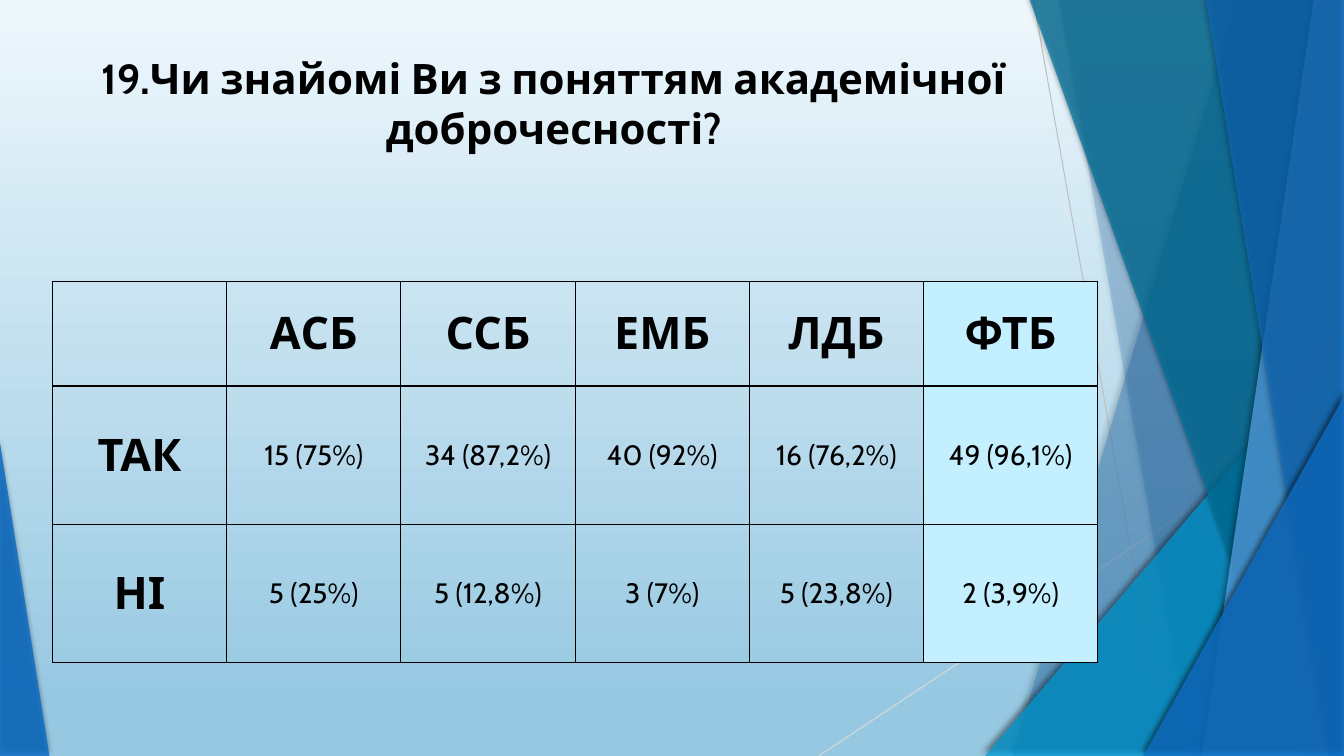
from dataclasses import dataclass

from lxml import etree
from pptx import Presentation
from pptx import util as u
from pptx.dml.color import RGBColor
from pptx.enum import shapes, text
from pptx.oxml.ns import qn


@dataclass(frozen=True)
class Theme:
    font: str = "Cabin"
    ink: str = "000000"
    sky: tuple = (("96C8E2", 0.06), ("EEF7FC", 1))
    blue: str = "0F6FC6"
    cyan: str = "009DD9"
    teal: str = "0076A3"
    pale: str = "59AAF2"
    mark: str = "C4EFFF"
    title: int = 30
    head: int = 32
    body: int = 20
    rule: float = 0.96


T = Theme()
W, H = 13.33, 7.5
TOP = -0.01  # facets bleed over the upper edge

ROWS = [
    ["", "АСБ", "ССБ", "ЕМБ", "ЛДБ", "ФТБ"],
    ["ТАК", "15 (75%)", "34 (87,2%)", "40 (92%)", "16 (76,2%)", "49 (96,1%)"],
    ["НІ", "5 (25%)", "5 (12,8%)", "3 (7%)", "5 (23,8%)", "2 (3,9%)"],
]

# Facets, back to front: upper x and lower x of the left edge, or a triangle's box and apex
FACETS = [
    ((12.28, 10.04), T.blue, 30),
    ((10.5, 11.82), T.blue, 20),
    ((9.77, 3.33, W, 1), T.cyan, 72),
    ((10.21, 12.91), T.teal, 70),
    ((13.03, 11.92), T.pale, 70),
    ((11.96, 13.18), T.blue, 65),
    ((11.34, 3.93, W, 1), T.blue, 80),
    ((0, 4.39, 0.49, 0), T.blue, 85),
]


def rgb(code):
    return RGBColor.from_string(code)


def sub(node, tag, **attrs):
    return etree.SubElement(node, qn(tag), {k: str(v) for k, v in attrs.items()})


def write(frame, words, size=T.body, bold=False, color=T.ink):
    para = frame.paragraphs[0]
    para.alignment = text.PP_ALIGN.CENTER
    run = para.add_run()
    run.text = words
    font = run.font
    font.name, font.size, font.bold = T.font, u.Pt(size), bold
    font.color.rgb = rgb(color)


def sky(slide):
    fill = slide.background.fill
    fill.gradient()
    fill.gradient_angle = 90
    for stop, (color, pos) in zip(fill.gradient_stops, T.sky):
        stop.color.rgb, stop.position = rgb(color), pos


def ray(slide, start, end, color):
    line = slide.shapes.add_connector(
        shapes.MSO_CONNECTOR.STRAIGHT, *map(u.Inches, start + end))
    line.line.color.rgb, line.line.width = rgb(color), u.Pt(0.75)
    sub(line._element.spPr, "a:effectLst")


def facet(slide, form, color, alpha):
    if len(form) == 2:
        high, low = form
        pts = [(u.Inches(x), u.Inches(y))
               for x, y in ((high, TOP), (W, TOP), (W, H), (low, H))]
        pen = slide.shapes.build_freeform(*pts[0])
        pen.add_line_segments(pts[1:], close=True)
        shape = pen.convert_to_shape()
    else:
        left, top, right, apex = form
        shape = slide.shapes.add_shape(
            shapes.MSO_SHAPE.ISOSCELES_TRIANGLE,
            *map(u.Inches, (left, top, right - left, H - top)))
        shape.adjustments[0] = apex
    shape.fill.solid()
    shape.fill.fore_color.rgb = rgb(color)
    shape.line.fill.background()
    # Transparency and soft shadow
    props = shape._element.spPr
    sub(props.find(".//" + qn("a:solidFill"))[0], "a:alpha", val=alpha * 1000)
    cast = sub(sub(props, "a:effectLst"), "a:outerShdw", blurRad=u.Pt(4),
               dist=u.Pt(3), dir=245 * 60000, rotWithShape=0)
    sub(sub(cast, "a:srgbClr", val=T.ink), "a:alpha", val=60000)


def decor(slide):
    ray(slide, (10.25, 0), (11.58, H), "BFBFBF")
    ray(slide, (W, 4.03), (8.12, H), "D9D9D9")
    for form, color, alpha in FACETS:
        facet(slide, form, color, alpha)


def title(slide, box, words):
    head = slide.shapes.title
    head.left, head.top, head.width, head.height = map(u.Inches, box)
    frame = head.text_frame
    frame.word_wrap = True
    frame.auto_size = text.MSO_AUTO_SIZE.NONE
    frame.vertical_anchor = text.MSO_ANCHOR.TOP
    write(frame, words, size=T.title, bold=True)
    slide.shapes._spTree.append(head._element)  # in front of the facets


def frame_cell(cell):
    props = cell._tc.get_or_add_tcPr()
    for spot, side in enumerate("LRTB"):
        edge = sub(props, "a:ln" + side, w=u.Pt(T.rule))
        sub(sub(edge, "a:solidFill"), "a:srgbClr", val=T.ink)
        props.insert(spot, edge)


def answers(slide, box, rows, highs):
    grid = slide.shapes.add_table(
        len(rows), len(rows[0]), *map(u.Inches, box)).table
    grid.first_row = grid.horz_banding = False
    for col in grid.columns:
        col.width = u.Inches(box[2] / len(rows[0]))
    for r, row in enumerate(rows):
        grid.rows[r].height = u.Inches(highs[r])
        for c, words in enumerate(row):
            cell = grid.cell(r, c)
            cell.vertical_anchor = text.MSO_ANCHOR.MIDDLE
            if c == len(row) - 1:
                cell.fill.solid()
                cell.fill.fore_color.rgb = rgb(T.mark)
            else:
                cell.fill.background()
            frame_cell(cell)
            if words:
                lead = r == 0 or c == 0
                write(cell.text_frame, words, bold=lead,
                      size=T.head if lead else T.body)


def main():
    deck = Presentation()
    deck.slide_width, deck.slide_height = u.Inches(W), u.Inches(H)
    slide = deck.slides.add_slide(deck.slide_layouts[5])
    sky(slide)
    decor(slide)
    title(slide, (0.38, 0.47, 10.23, 1.44),
          "19.Чи знайомі Ви з поняттям академічної доброчесності?")
    answers(slide, (0.52, 2.79, 10.37, 3.79), ROWS, (1.04, 1.37, 1.37))
    deck.save("out.pptx")


if __name__ == "__main__":
    main()
